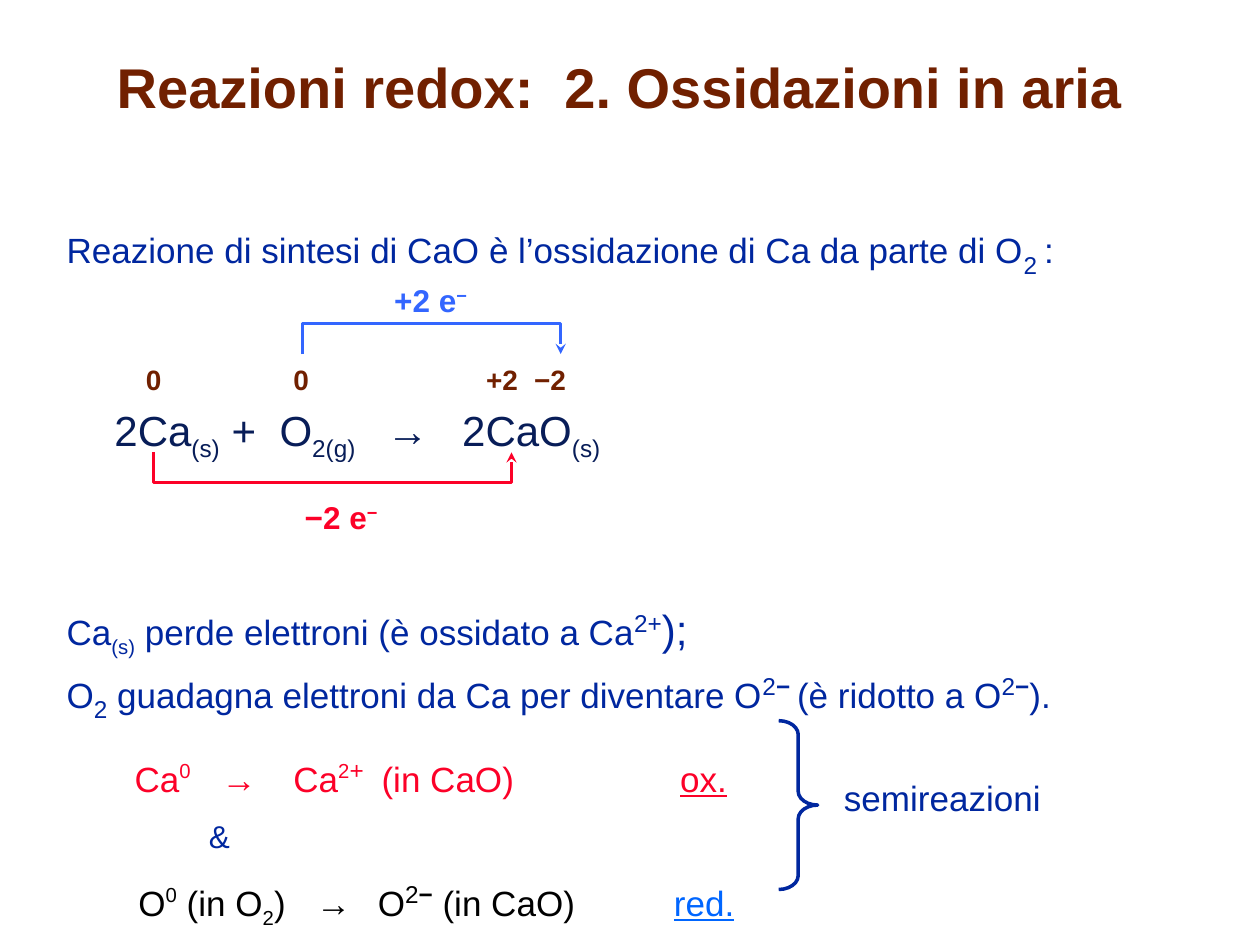
"""Build a slide on redox reactions: oxidations in air."""
import pptx
import pptx.util
import pptx.dml.color
import pptx.enum.shapes
import pptx.enum.text
import pptx.oxml.ns
import lxml.etree

HUES = {"brown": "712000", "navy": "00279F", "dark": "081D58", "red": "FC0128",
        "blue": "3366FF", "sky": "0066FF", "black": "000000"}
WIDE, HIGH = 10, 7.5
TITLE = "Reazioni redox:  2. Ossidazioni in aria"

SUB = {"base": -25}
SUP = {"base": 40}
BIG = {"base": 30, "size": 24}
BOLD = {"base": 30, "size": 24, "bold": True}

ROWS = [
    {"gap": 0, "tabs": [], "fmt": {}, "runs": [
        ("Reazione di sintesi di CaO è l’ossidazione di Ca da parte di O", {}),
        ("2 ", {"base": -25, "size": 24}), (":", {})]},
    {"gap": 74.5, "tabs": [0.38, 1.69, 2.54, 3.14], "fmt": {"size": 24, "hue": "dark"}, "runs": [
        ("\t2Ca", {}), ("(s)", SUB), (" +\tO", {}), ("2(g)", SUB),
        ("\t→\t2CaO", {}), ("(s)", SUB)]},
    {"gap": 82, "tabs": [], "fmt": {}, "runs": [
        ("Ca", {}), ("(s)", SUB), (" perde elettroni (è ossidato a Ca", {}),
        ("2+", BIG), (");", {"size": 24})]},
    {"gap": 7.5, "tabs": [], "fmt": {}, "runs": [
        ("O", {}), ("2", {"base": -25, "size": 24}),
        (" guadagna elettroni da Ca per diventare O", {}), ("2", BIG), ("− ", BOLD),
        ("(è ridotto a O", {}), ("2", BIG), ("−", BOLD), (").", {})]},
    {"gap": 14, "tabs": [0.54, 1.23, 1.8, 2.5, 4.87], "fmt": {"hue": "red"}, "runs": [
        ("\tCa", {}), ("0", SUP), ("\t→\tCa", {}), ("2", SUP), ("+", BIG),
        ("\t(in CaO)\t", {}), ("ox.", {"under": True})]},
    {"gap": 1, "tabs": [1.13], "fmt": {"size": 18}, "runs": [("\t&", {})]},
    {"gap": 12.5, "tabs": [0.57, 1.98, 2.47, 4.82], "fmt": {"hue": "black"}, "runs": [
        ("\tO", {}), ("0", SUP), (" (in O", {}), ("2", SUB), (")\t→\tO", {}),
        ("2", BIG), ("−", BOLD), (" (in CaO)\t", {}),
        ("red.", {"hue": "sky", "under": True})]},
]
STATES = {"tabs": [1.17, 2.7, 3.08], "runs": [("0\t0\t+2\t−2", {})],
          "fmt": {"size": 16, "hue": "brown", "bold": True}}
SEMI = {"runs": [("semireazioni", {})], "fmt": {}}
MOVES = [
    {"text": "+2 e", "hue": "blue", "at": (3.03, 2.18), "span": (2.4, 4.45), "ends": 2.81, "bar": 2.57},
    {"text": "−2 e", "hue": "red", "at": (2.32, 3.9), "span": (1.22, 4.06), "ends": 3.59, "bar": 3.83},
]

inch = pptx.util.Inches
tag = pptx.oxml.ns.qn


def paint(hue):
    return pptx.dml.color.RGBColor.from_string(HUES[hue])


def put(para, text, size=20, hue="navy", bold=False, under=False, base=0):
    run = para.add_run()
    run.text = text
    font = run.font
    font.name, font.size, font.bold = "Arial", pptx.util.Pt(size), bold
    font.color.rgb = paint(hue)
    if under:
        font.underline = True
    if base:
        run._r.get_or_add_rPr().set("baseline", str(base * 1000))


def fill(para, row):
    for text, extra in row["runs"]:
        put(para, text, **{**row["fmt"], **extra})
    if row.get("tabs"):
        stops = lxml.etree.SubElement(para._p.get_or_add_pPr(), tag("a:tabLst"))
        for stop in row["tabs"]:
            lxml.etree.SubElement(stops, tag("a:tab"), pos=str(inch(stop)), algn="l")


def frame(slide, left, top, wide, high, wrap=True):
    text = slide.shapes.add_textbox(*map(inch, (left, top, wide, high))).text_frame
    text.word_wrap = wrap
    return text


def stroke(shape, hue, width):
    shape.shadow.inherit = False
    shape.fill.background()
    shape.line.color.rgb = paint(hue)
    shape.line.width = pptx.util.Pt(width)


def route(slide, move):
    (start, stop), ends, bar = move["span"], move["ends"], move["bar"]
    spots = [(inch(x), inch(y)) for x, y in
             ((start, ends), (start, bar), (stop, bar), (stop, ends))]
    form = slide.shapes.build_freeform(*spots[0])
    form.add_line_segments(spots[1:], close=False)
    shape = form.convert_to_shape()
    stroke(shape, move["hue"], 1.5)
    line = shape._element.spPr.find(tag("a:ln"))
    lxml.etree.SubElement(line, tag("a:tailEnd"), type="stealth")


def main():
    deck = pptx.Presentation()
    deck.slide_width, deck.slide_height = inch(WIDE), inch(HIGH)
    slide = deck.slides.add_slide(deck.slide_layouts[5])

    title = slide.shapes.title
    title.left, title.top, title.width, title.height = map(inch, (0.67, 0.19, 8.5, 0.98))
    title.text_frame.vertical_anchor = pptx.enum.text.MSO_ANCHOR.MIDDLE
    head = title.text_frame.paragraphs[0]
    head.alignment = pptx.enum.text.PP_ALIGN.CENTER
    put(head, TITLE, size=32, hue="brown", bold=True)

    body = frame(slide, 0.43, 1.75, 9.08, 5.56)
    for num, row in enumerate(ROWS):
        para = body.add_paragraph() if num else body.paragraphs[0]
        para.line_spacing = pptx.util.Pt(30)
        para.space_before = pptx.util.Pt(row["gap"])
        fill(para, row)

    brace = slide.shapes.add_shape(pptx.enum.shapes.MSO_SHAPE.RIGHT_BRACE,
                                   *map(inch, (6.18, 5.72, 0.31, 1.34)))
    brace.adjustments[0], brace.adjustments[1] = 0.355, 0.5
    stroke(brace, "navy", 2)

    fill(frame(slide, 6.6, 6.11, 1.76, 0.43, wrap=False).paragraphs[0], SEMI)
    fill(frame(slide, 1.06, 2.83, 3.58, 0.37).paragraphs[0], STATES)
    for move in MOVES:
        route(slide, move)
        label = {"runs": [(move["text"], {}), ("−", {"base": 30})],
                 "fmt": {"size": 18, "hue": move["hue"], "bold": True}}
        fill(frame(slide, *move["at"], 0.79, 0.4, wrap=False).paragraphs[0], label)

    deck.save("out.pptx")


if __name__ == "__main__":
    main()
